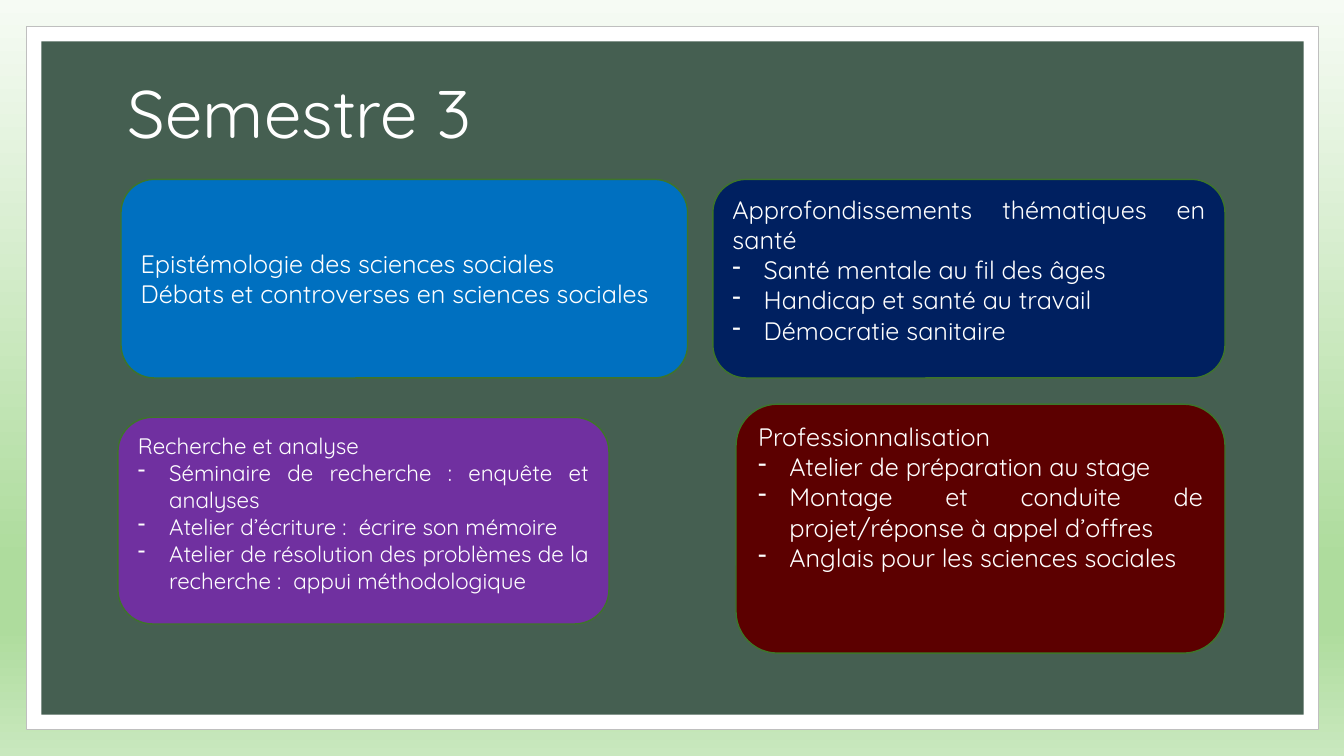
from lxml import etree
from pptx import Presentation
from pptx.dml.color import RGBColor
from pptx.enum import shapes, text
from pptx.oxml.ns import qn
from pptx.util import Inches, Pt

FONT = "Quicksand"
WHITE = "FFFFFF"
BACKGROUND_STOPS = [(0, "F6FBF4"), (74, "AEDC9D"), (83, "AEDC9D"), (100, "C9E8BE")]

# place, fill, text size, anchor, plain lines, dashed lines
COURSES = [
    ((1.2, 1.78, 5.62, 1.97), "0070C0", 18, text.MSO_ANCHOR.MIDDLE,
     ["Epistémologie des sciences sociales",
      "Débats et controverses en sciences sociales"], []),
    ((7.07, 1.78, 5.08, 1.97), "002060", 18, text.MSO_ANCHOR.TOP,
     ["Approfondissements thématiques en santé"],
     ["Santé mentale au fil des âges",
      "Handicap et santé au travail",
      "Démocratie sanitaire"]),
    ((1.17, 4.14, 4.87, 2.05), "7030A0", 16, text.MSO_ANCHOR.TOP,
     ["Recherche et analyse"],
     ["Séminaire de recherche : enquête et analyses",
      "Atelier d’écriture :  écrire son mémoire",
      "Atelier de résolution des problèmes de la recherche :  appui méthodologique"]),
    ((7.3, 4.01, 4.85, 2.47), "5C0000", 18, text.MSO_ANCHOR.TOP,
     ["Professionnalisation"],
     ["Atelier de préparation au stage",
      "Montage et conduite de projet/réponse à appel d’offres",
      "Anglais pour les sciences sociales"]),
]


def rgb(value):
    return RGBColor.from_string(value)


def set_format(target, values):
    for name, value in values.items():
        setattr(target, name, value)


def paint_background(slide):
    fill = slide.background.fill
    fill.gradient()
    fill.gradient_angle = 270
    stops = next(slide.element.iter(qn("a:gsLst")))
    for stop in list(stops):
        stops.remove(stop)
    for percent, color in BACKGROUND_STOPS:
        stop = etree.SubElement(stops, qn("a:gs"), pos=str(percent * 1000))
        etree.SubElement(stop, qn("a:srgbClr"), val=color)


def add_box(slide, kind, place, fill, line=None, width=1):
    box = slide.shapes.add_shape(kind, *map(Inches, place))
    box.shadow.inherit = False
    box.fill.solid()
    box.fill.fore_color.rgb = rgb(fill)
    if line:
        box.line.color.rgb = rgb(line)
        box.line.width = Pt(width)
    else:
        box.line.fill.background()
    return box


def write_line(paragraph, wording, size, **values):
    set_format(paragraph, values)
    run = paragraph.add_run()
    run.text = wording
    set_format(run.font, {"name": FONT, "size": Pt(size)})
    run.font.color.rgb = rgb(WHITE)


def add_dash(paragraph):
    """Give the paragraph a hanging dash bullet."""
    properties = paragraph._p.get_or_add_pPr()
    properties.set("marL", str(Inches(0.31)))
    properties.set("indent", str(Inches(-0.31)))
    etree.SubElement(properties, qn("a:buChar"), char="-")


def add_title(slide, wording):
    title = slide.shapes.add_textbox(*map(Inches, (1.17, 0.7, 11, 0.92)))
    set_format(title.text_frame, {"word_wrap": True,
                                  "vertical_anchor": text.MSO_ANCHOR.MIDDLE})
    write_line(title.text_frame.paragraphs[0], wording, 48, line_spacing=0.9)


def add_course(slide, place, fill, size, anchor, headings, topics):
    card = add_box(slide, shapes.MSO_SHAPE.ROUNDED_RECTANGLE, place, fill, "3E752A")
    frame = card.text_frame
    set_format(frame, {"word_wrap": True, "vertical_anchor": anchor})
    for index, wording in enumerate(headings + topics):
        paragraph = frame.add_paragraph() if index else frame.paragraphs[0]
        write_line(paragraph, wording, size, alignment=text.PP_ALIGN.JUSTIFY)
        if index >= len(headings):
            add_dash(paragraph)


def main():
    deck = Presentation()
    set_format(deck, {"slide_width": Inches(13.33), "slide_height": Inches(7.5)})
    slide = deck.slides.add_slide(deck.slide_layouts[6])
    paint_background(slide)
    rectangle = shapes.MSO_SHAPE.RECTANGLE
    add_box(slide, rectangle, (0.26, 0.26, 12.82, 6.98), WHITE, "BFBFBF", 0.5)
    add_box(slide, rectangle, (0.41, 0.41, 12.52, 6.68), "455F51")
    add_title(slide, "Semestre 3")
    for course in COURSES:
        add_course(slide, *course)
    deck.save("out.pptx")


if __name__ == "__main__":
    main()
